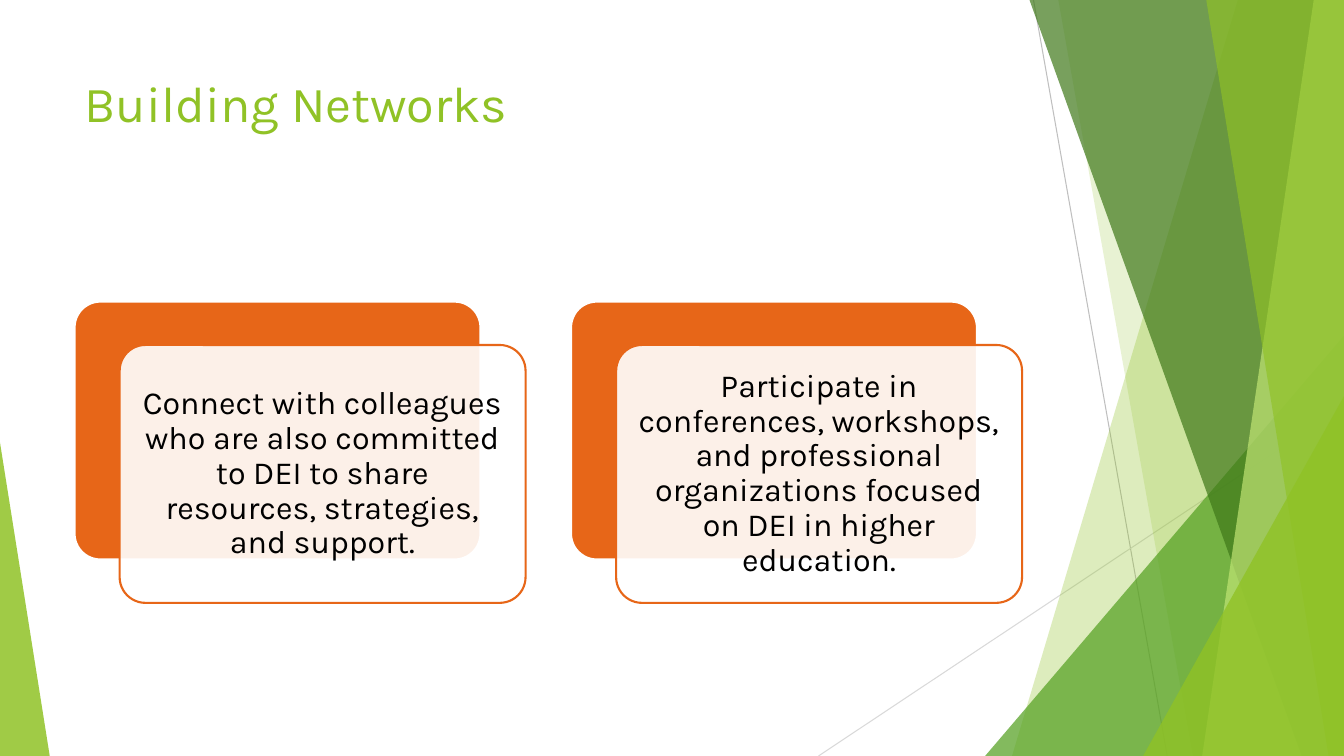
from lxml import etree
from pptx import Presentation
from pptx.dml.color import RGBColor
from pptx.enum.shapes import MSO_CONNECTOR, MSO_SHAPE
from pptx.enum.text import MSO_ANCHOR, PP_ALIGN
from pptx.oxml.ns import qn
from pptx.util import Inches, Pt

STRAIGHT = MSO_CONNECTOR.STRAIGHT
TRIANGLE = MSO_SHAPE.ISOSCELES_TRIANGLE
ROUNDED = MSO_SHAPE.ROUNDED_RECTANGLE
CENTER = PP_ALIGN.CENTER
MIDDLE = MSO_ANCHOR.MIDDLE
W, H = Inches(13.333), Inches(7.5)
FONT = "Karla"
GREEN, ORANGE, WHITE, BLACK = "90C226", "E76618", "FFFFFF", "000000"

LINES = [(76.9, 0, 86.85, 100, "BFBFBF"), (100, 53.75, 60.9, 100, "D9D9D9")]
BACK_BANDS = [(92.1, 75.3, GREEN, 30), (78.75, 88.75, GREEN, 20)]
FRONT_BANDS = [(76.6, 96.85, "3F7819", 70), (97.75, 89.45, "C0E474", 70),
               (89.75, 98.85, GREEN, 65)]
MESSAGES = [
    "Connect with colleagues who are also committed to DEI to share resources, "
    "strategies, and support.",
    "Participate in conferences, workshops, and professional organizations "
    "focused on DEI in higher education.",
]


def share(length, percent):
    return round(length * percent / 100)


def color(value):
    return RGBColor.from_string(value)


def paint(sp, fill, opacity=100, line=None):
    sp.shadow.inherit = False
    sp.fill.solid()
    sp.fill.fore_color.rgb = color(fill)
    if opacity < 100:
        clr = sp.fill._xPr.find(qn("a:solidFill"))[0]
        etree.SubElement(clr, qn("a:alpha"), val=str(opacity * 1000))
    if line:
        sp.line.color.rgb = color(line)
        sp.line.width = Pt(1.5)
    else:
        sp.line.fill.background()


def write(tf, text, size, value):
    tf.word_wrap = True
    p = tf.paragraphs[0]
    p.text = text
    font = p.runs[0].font
    font.name, font.size = FONT, Pt(size)
    font.color.rgb = color(value)
    return p


def add_line(s, x1, y1, x2, y2, value):
    cx = s.shapes.add_connector(STRAIGHT, share(W, x1), share(H, y1),
                                share(W, x2), share(H, y2))
    cx.line.color.rgb = color(value)
    cx.line.width = Pt(0.75)
    etree.SubElement(cx._element.spPr, qn("a:effectLst"))


def add_band(s, top_x, bottom_x, fill, opacity):
    builder = s.shapes.build_freeform(share(W, top_x), 0)
    builder.add_line_segments([(W, 0), (W, H), (share(W, bottom_x), H)])
    paint(builder.convert_to_shape(), fill, opacity)


def add_corner(s, left, top, right, peak, fill, opacity):
    x, y = share(W, left), share(H, top)
    sp = s.shapes.add_shape(TRIANGLE, x, y, share(W, right) - x, H - y)
    sp.adjustments[0] = peak
    paint(sp, fill, opacity)


def add_facets(s):
    for line in LINES:
        add_line(s, *line)
    for band in BACK_BANDS:
        add_band(s, *band)
    add_corner(s, 73.3, 44.4, 100, 1, "54A021", 72)
    for band in FRONT_BANDS:
        add_band(s, *band)
    add_corner(s, 85.05, 52.4, 100, 1, GREEN, 80)
    add_corner(s, 0, 58.55, 3.7, 0, GREEN, 85)


def add_title(s, text, x, y, w, h):
    sp = s.shapes.add_textbox(x, y, w, h)
    write(sp.text_frame, text, 36, GREEN)


def add_card(s, text, x, y, w, h):
    card_w, card_h = share(w, 90), share(h, 85.6)
    back = s.shapes.add_shape(ROUNDED, x, y, card_w, card_h)
    front = s.shapes.add_shape(ROUNDED, x + w - card_w, y + h - card_h,
                               card_w, card_h)
    for sp in (back, front):
        sp.adjustments[0] = 0.1
    paint(back, ORANGE, line=WHITE)
    paint(front, WHITE, 90, ORANGE)
    tf = front.text_frame
    tf.margin_left = tf.margin_right = Inches(0.1)
    tf.margin_top = tf.margin_bottom = Inches(0.1)
    tf.vertical_anchor = MIDDLE
    p = write(tf, text, 23, BLACK)
    p.alignment = CENTER
    p.line_spacing = 0.9


def add_cards(s, messages, x, y, w, h):
    card_w = share(w, 47.6)
    pitch = (w - card_w) // (len(messages) - 1)
    for i, message in enumerate(messages):
        add_card(s, message, x + i * pitch, y, card_w, h)


def main():
    prs = Presentation()
    prs.slide_width, prs.slide_height = W, H
    s = prs.slides.add_slide(prs.slide_layouts[6])
    left, width = share(W, 5.55), share(W, 70.5)
    add_facets(s)
    add_title(s, "Building Networks", left, share(H, 8.95), width, share(H, 19.2))
    add_cards(s, MESSAGES, left, share(H, 39.9), width, share(H, 39.85))
    prs.save("out.pptx")


if __name__ == "__main__":
    main()
